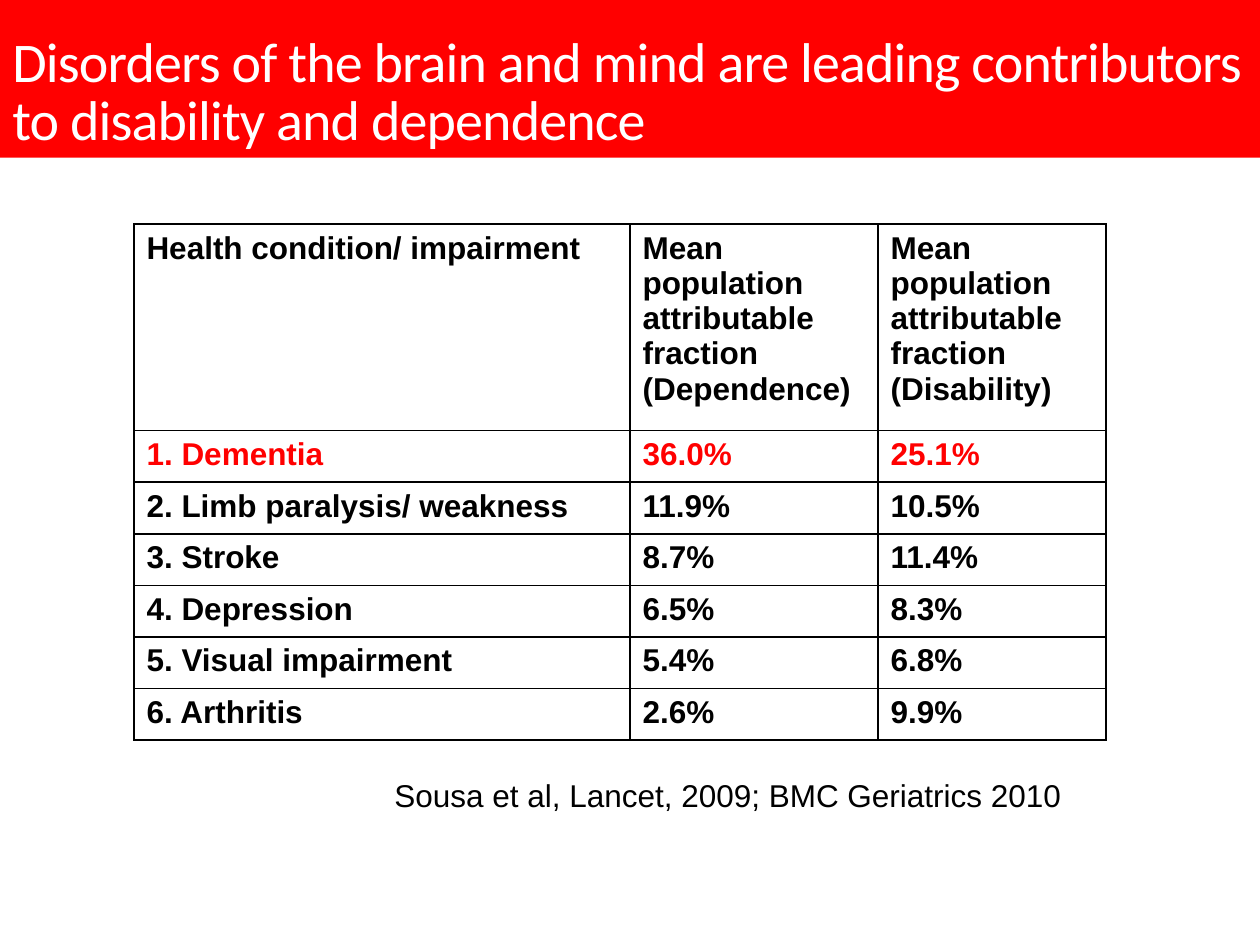
from lxml import etree
from pptx import Presentation
from pptx import util as u
from pptx.dml.color import RGBColor
from pptx.enum import shapes, text
from pptx.oxml.ns import qn

TITLE = ("Disorders of the brain and mind are leading contributors "
         "to disability and dependence")
SOURCE = "Sousa et al, Lancet, 2009; BMC Geriatrics 2010"
FRACTION = "Mean population attributable fraction"
ROWS = [
    ("Health condition/ impairment", FRACTION + "\n(Dependence)",
     FRACTION + "\n(Disability)"),
    ("1. Dementia", "36.0%", "25.1%"),
    ("2. Limb paralysis/ weakness", "11.9%", "10.5%"),
    ("3. Stroke", "8.7%", "11.4%"),
    ("4. Depression", "6.5%", "8.3%"),
    ("5. Visual impairment", "5.4%", "6.8%"),
    ("6. Arthritis", "2.6%", "9.9%"),
]
HIGHLIGHT_ROW = 1
COL_WIDTHS = (10, 5, 4.6)
HEADER_H, ROW_H = 4.16, 1.04
RED, BLACK, WHITE = "FF0000", "000000", "FFFFFF"


def rgb(color):
    return RGBColor.from_string(color)


def style(p, font, size, color, bold=False):
    p.font.name, p.font.size, p.font.bold = font, u.Pt(size), bold
    p.font.color.rgb = rgb(color)


def add_borders(cell, color=BLACK, width=1):
    tc_pr = cell._tc.get_or_add_tcPr()
    for side in ("lnL", "lnR", "lnT", "lnB"):
        ln = etree.SubElement(tc_pr, qn("a:" + side), w=str(u.Pt(width)))
        fill = etree.SubElement(ln, qn("a:solidFill"))
        etree.SubElement(fill, qn("a:srgbClr"), val=color)


def add_title(slide):
    sp = slide.shapes.add_shape(shapes.MSO_SHAPE.RECTANGLE, 0, 0,
                                u.Cm(25.4), u.Cm(3.18))
    sp.shadow.inherit = False
    sp.fill.solid()
    sp.fill.fore_color.rgb = rgb(RED)
    sp.line.fill.background()
    tf = sp.text_frame
    tf.word_wrap = True
    tf.vertical_anchor = text.MSO_ANCHOR.BOTTOM
    p = tf.paragraphs[0]
    p.alignment = text.PP_ALIGN.LEFT
    p.line_spacing = 0.85
    r = p.add_run()
    r.text = TITLE
    r._r.get_or_add_rPr().set("spc", "-50")
    style(p, "Calibri", 32, WHITE)


def add_conditions(slide):
    heights = [HEADER_H] + [ROW_H] * (len(ROWS) - 1)
    table = slide.shapes.add_table(
        len(ROWS), len(COL_WIDTHS), u.Cm(2.7), u.Cm(4.52),
        u.Cm(sum(COL_WIDTHS)), u.Cm(sum(heights))).table
    table.first_row = table.horz_banding = False
    for col, width in zip(table.columns, COL_WIDTHS):
        col.width = u.Cm(width)
    for i, (row, height, values) in enumerate(zip(table.rows, heights, ROWS)):
        row.height = u.Cm(height)
        for cell, value in zip(row.cells, values):
            add_borders(cell)
            cell.fill.background()
            cell.text_frame.text = value
            for p in cell.text_frame.paragraphs:
                style(p, "Arial", 18, RED if i == HIGHLIGHT_ROW else BLACK,
                      bold=True)


def add_source(slide):
    sp = slide.shapes.add_textbox(u.Cm(7.7), u.Cm(15.52), u.Cm(14.4), u.Cm(1.02))
    tf = sp.text_frame
    tf.word_wrap = True
    tf.text = SOURCE
    style(tf.paragraphs[0], "Arial", 18, BLACK)


def main():
    prs = Presentation()
    prs.slide_width, prs.slide_height = u.Cm(25.4), u.Cm(19.05)
    slide = prs.slides.add_slide(prs.slide_layouts[6])
    add_title(slide)
    add_conditions(slide)
    add_source(slide)
    prs.save("out.pptx")


if __name__ == "__main__":
    main()
